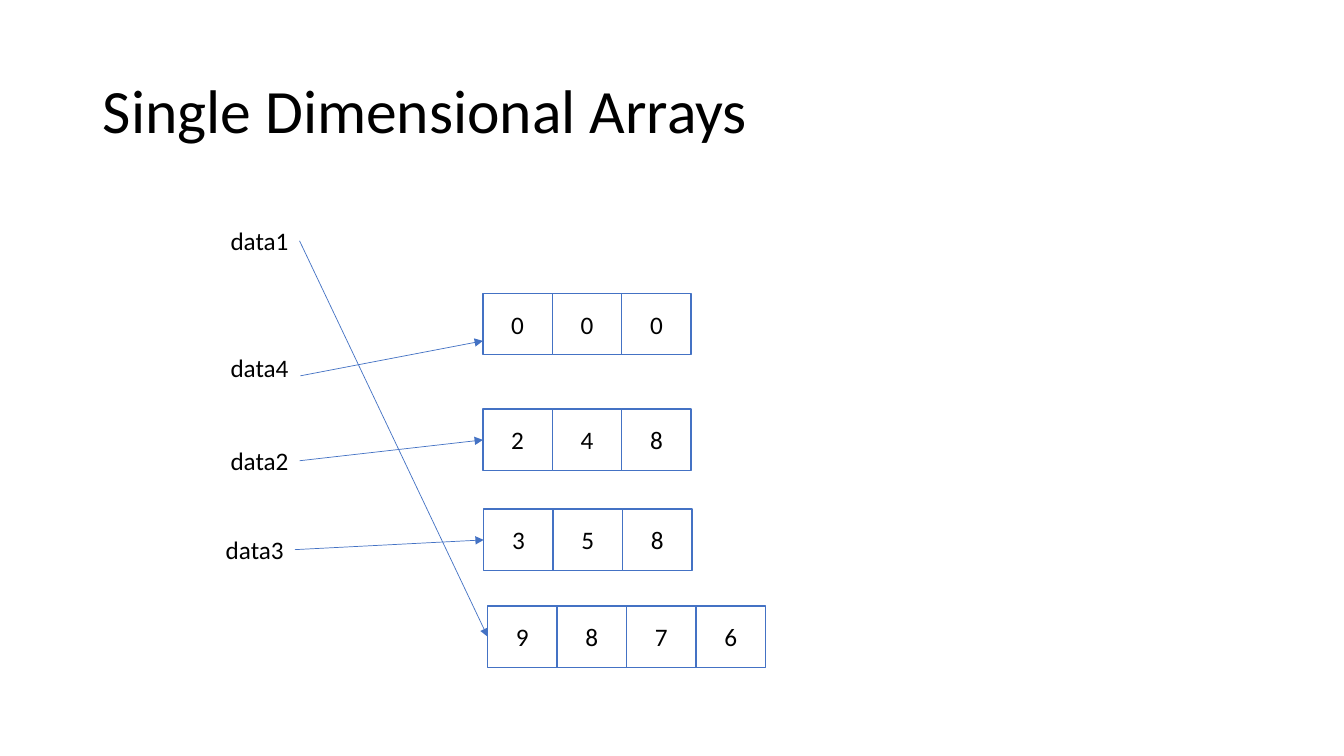
"""Draw four array variables and the rows of cells they refer to."""
import pptx
import pptx.dml.color
import pptx.enum.shapes
import pptx.enum.text
import pptx.oxml
import pptx.oxml.ns
import pptx.util

Cm = pptx.util.Cm
Pt = pptx.util.Pt
Align = pptx.enum.text.PP_ALIGN
Anchor = pptx.enum.text.MSO_ANCHOR
Fit = pptx.enum.text.MSO_AUTO_SIZE

BLACK = pptx.dml.color.RGBColor(0, 0, 0)
WHITE = pptx.dml.color.RGBColor(255, 255, 255)
BLUE = pptx.dml.color.RGBColor(0x44, 0x72, 0xC4)

ROWS = [
    ("data4", 5.56, 8.76, 12.17, 7.39, "000"),
    ("data1", 5.56, 5.56, 12.29, 15.27, "9876"),
    ("data2", 5.56, 11.1, 12.17, 10.31, "248"),
    ("data3", 5.44, 13.34, 12.19, 12.83, "358"),
]


class Board:
    """Hold the style and the current slide."""

    font = "Calibri"
    wide, high = 1.75, 1.55

    def __init__(self, deck):
        self.slide = deck.slides.add_slide(deck.slide_layouts[5])
        self.shapes = self.slide.shapes

    def apply(self, item, values):
        for name, value in values.items():
            setattr(item, name, value)

    def letter(self, shape, text, size, frame, para):
        body = shape.text_frame
        body.text = text
        first = body.paragraphs[0]
        self.apply(body, frame)
        self.apply(first, para)
        font = first.runs[0].font
        self.apply(font, {"name": self.font, "size": Pt(size)})
        font.color.rgb = BLACK

    def title(self, text):
        head = self.shapes.title
        self.apply(head, {"left": Cm(2.34), "top": Cm(1.02),
                          "width": Cm(29.21), "height": Cm(3.68)})
        self.letter(head, text, 44,
                    {"vertical_anchor": Anchor.MIDDLE, "auto_size": Fit.NONE},
                    {"alignment": Align.LEFT, "line_spacing": 0.9})

    def label(self, text, left, top):
        box = self.shapes.add_textbox(Cm(left), Cm(top), Cm(1.99), Cm(1.02))
        self.letter(box, text, 18,
                    {"word_wrap": False, "auto_size": Fit.SHAPE_TO_FIT_TEXT},
                    {"alignment": Align.LEFT})
        return box

    def cell(self, group, text, left, top):
        box = group.shapes.add_shape(
            pptx.enum.shapes.MSO_SHAPE.RECTANGLE,
            Cm(left), Cm(top), Cm(self.wide), Cm(self.high))
        box.shadow.inherit = False
        box.fill.solid()
        box.fill.fore_color.rgb = WHITE
        box.line.color.rgb = BLUE
        box.line.width = Pt(1)
        self.letter(box, text, 18, {"vertical_anchor": Anchor.MIDDLE},
                    {"alignment": Align.CENTER})
        return box

    def array(self, digits, left, top):
        group = self.shapes.add_group_shape()
        cells = [self.cell(group, digit, left + i * self.wide, top)
                 for i, digit in enumerate(digits)]
        return cells[0]

    def arrow(self, x1=0, y1=0, x2=0, y2=0):
        line = self.shapes.add_connector(
            pptx.enum.shapes.MSO_CONNECTOR.STRAIGHT,
            Cm(x1), Cm(y1), Cm(x2), Cm(y2))
        line.line.color.rgb = BLUE
        line.line.width = Pt(0.5)
        tip = pptx.oxml.parse_xml(
            '<a:tailEnd %s type="triangle"/>' % pptx.oxml.ns.nsdecls("a"))
        props = line._element.spPr
        props.find(pptx.oxml.ns.qn("a:ln")).append(tip)
        props.append(props.makeelement(pptx.oxml.ns.qn("a:effectLst"), {}))
        return line

    def join(self, label, cell):
        line = self.arrow()
        line.begin_connect(label, 3)
        line.end_connect(cell, 1)


def main():
    deck = pptx.Presentation()
    deck.slide_width, deck.slide_height = Cm(33.87), Cm(19.05)
    board = Board(deck)
    board.title("Single Dimensional Arrays")
    for name, x, y, left, top, digits in ROWS:
        label = board.label(name, x, y)
        cell = board.array(digits, left, top)
        if name == "data4":
            board.arrow(7.57, 9.47, left, 8.59)
        else:
            board.join(label, cell)
    deck.save("out.pptx")


if __name__ == "__main__":
    main()
